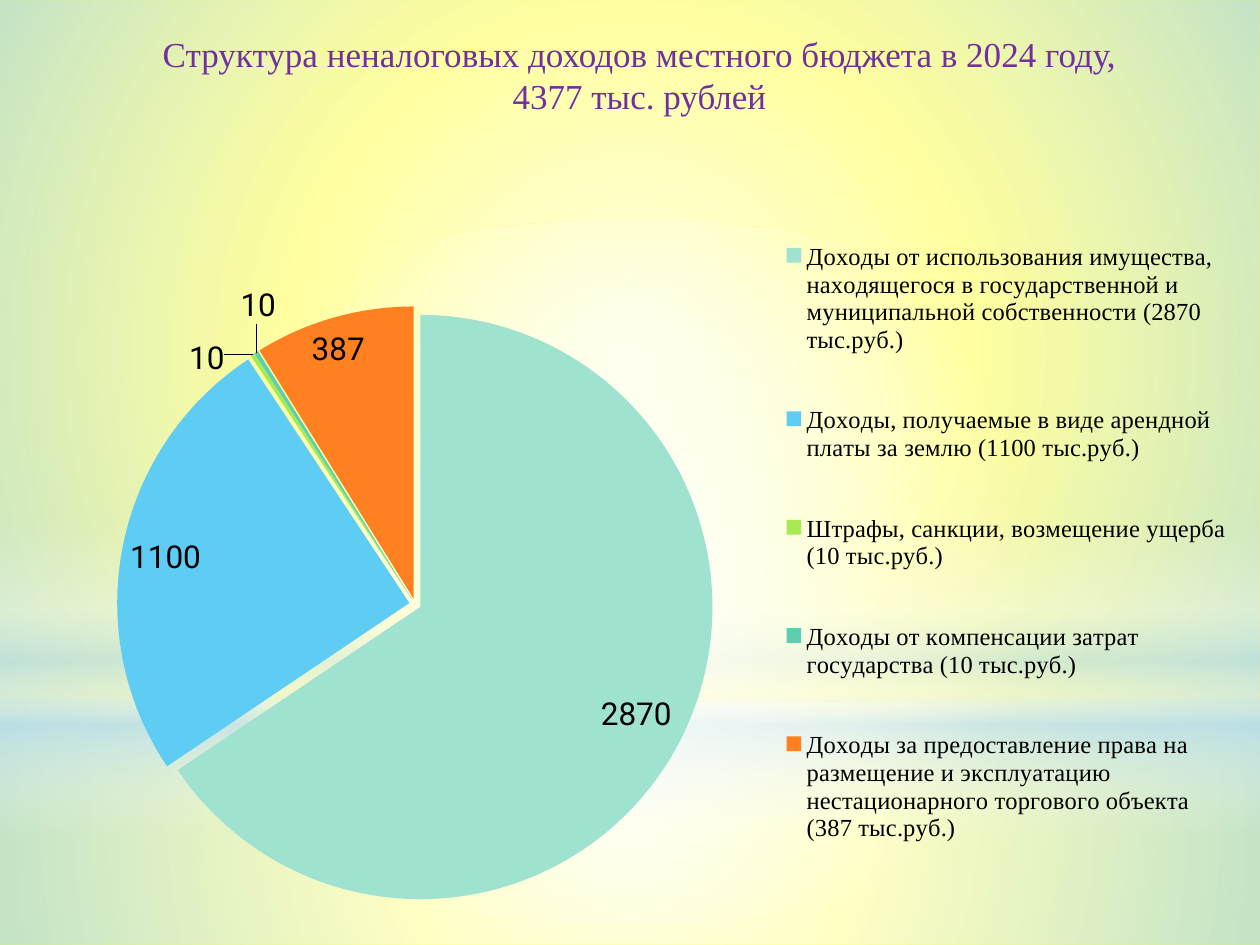
from lxml import etree
from pptx import Presentation
from pptx import util as u
from pptx.chart.data import CategoryChartData
from pptx.dml.color import RGBColor
from pptx.enum import chart as charts, shapes, text
from pptx.oxml import parse_xml
from pptx.oxml.ns import nsdecls, qn

SCALE = 914400 / 126


def px(length):
    return u.Emu(round(length * SCALE))


def color(value):
    return RGBColor.from_string(value)


deck = Presentation()
deck.slide_width, deck.slide_height = px(1260), px(945)
page = deck.slides.add_slide(deck.slide_layouts[5])
page.background.fill.solid()
page.background.fill.fore_color.rgb = color("FFFF00")

# Background glow: shape, box, shading, stops of (position, colour, opacity)
RADIAL = ('<a:path path="circle"><a:fillToRect l="50000" t="50000" '
          'r="50000" b="50000"/></a:path>')
LINEAR = '<a:lin ang="5400000" scaled="0"/>'
RECT, OVAL = shapes.MSO_SHAPE.RECTANGLE, shapes.MSO_SHAPE.OVAL
WHITE, BLUE = "FFFFFF", "B4DCFA"
layers = [
    (RECT, (0, 703, 1260, 242), RADIAL,
     [(0, WHITE, 91), (37, WHITE, 76), (100, BLUE, 79)]),
    (RECT, (0, 0, 1260, 703), RADIAL,
     [(0, WHITE, 89), (48, WHITE, 62), (100, BLUE, 79)]),
    (RECT, (0, 519, 1260, 315), LINEAR,
     [(0, WHITE, 0), (29, WHITE, 30), (45, BLUE, 40),
      (55, WHITE, 26), (65, BLUE, 60), (100, WHITE, 0)]),
    (OVAL, (0, 221, 1260, 703), RADIAL,
     [(0, WHITE, 100), (56, WHITE, 0)]),
]
for kind, box, shading, stops in layers:
    layer = page.shapes.add_shape(kind, *map(px, box))
    layer.shadow.inherit = False
    layer.line.fill.background()
    stop_xml = "".join(
        f'<a:gs pos="{position * 1000}"><a:srgbClr val="{tone}">'
        f'<a:alpha val="{opacity * 1000}"/></a:srgbClr></a:gs>'
        for position, tone, opacity in stops)
    gradient = parse_xml(
        f'<a:gradFill {nsdecls("a")} rotWithShape="1">'
        f'<a:gsLst>{stop_xml}</a:gsLst>{shading}</a:gradFill>')
    layer.element.spPr.find(qn("a:prstGeom")).addnext(gradient)

# Pie chart
slices = [
    ("Доходы от использования имущества, находящегося в государственной "
     "и муниципальной собственности (2870 тыс.руб.)", 2870, "9EE2CF"),
    ("Доходы, получаемые в виде арендной платы за землю (1100 тыс.руб.)",
     1100, "5ECCF3"),
    ("Штрафы, санкции, возмещение ущерба (10 тыс.руб.)", 10, "A7EA52"),
    ("Доходы от компенсации затрат государства (10 тыс.руб.)", 10, "5DCEAF"),
    ("Доходы за предоставление права на размещение и эксплуатацию "
     "нестационарного торгового объекта (387 тыс.руб.)", 387, "FF8021"),
]
chart_data = CategoryChartData()
chart_data.categories = [name for name, amount, tone in slices]
chart_data.add_series("Series 1", [amount for name, amount, tone in slices])
chart = page.shapes.add_chart(
    charts.XL_CHART_TYPE.PIE, px(46), px(190), px(1191), px(727),
    chart_data).chart
chart.has_title = False
chart.has_legend = True
chart.legend.position = charts.XL_LEGEND_POSITION.RIGHT
chart.legend.include_in_layout = False

pie = chart.plots[0]
pie.vary_by_categories = True
series = pie.series[0]
for index, (name, amount, tone) in enumerate(slices):
    fill = series.points[index].format.fill
    fill.solid()
    fill.fore_color.rgb = color(tone)
explosion = etree.Element(qn("c:explosion"), val="2")
series._element.find(qn("c:dPt")).addprevious(explosion)

# Value labels: side of the edge and shift, one for each slice
labels = series.data_labels
labels.show_value = True
INSIDE = charts.XL_LABEL_POSITION.INSIDE_END
OUTSIDE = charts.XL_LABEL_POSITION.OUTSIDE_END
label_places = [(INSIDE, 0, -0.01), (INSIDE, 0, -0.01), (OUTSIDE, -0.02, 0.04),
                (OUTSIDE, 0.02, -0.03), (INSIDE, -0.02, 0.01)]
fonts = [(chart.font, 18, "Roboto"), (labels.font, 18, "Roboto"),
         (chart.legend.font, 14, "Times New Roman")]
for index, (side, shift_x, shift_y) in enumerate(label_places):
    label = series.points[index].data_label
    label.position = side
    fonts.append((label.font, 18, "Roboto"))
    layout = parse_xml(
        f'<c:layout {nsdecls("c")}><c:manualLayout><c:x val="{shift_x}"/>'
        f'<c:y val="{shift_y}"/></c:manualLayout></c:layout>')
    entry = series._element.xpath(f'c:dLbls/c:dLbl[c:idx/@val="{index}"]')[0]
    entry.find(qn("c:idx")).addnext(layout)
for font, size, face in fonts:
    font.size, font.name = u.Pt(size), face
    font.color.rgb = color("000000")

# Fixed places for the pie and the legend
places = [
    (chart._chartSpace.chart.plotArea, '<c:layoutTarget val="inner"/>',
     (0.01, 0.16, 0.6, 0.82)),
    (chart.legend._element, "", (0.62, 0, 0.38, 0.97)),
]
for owner, target, box in places:
    for old in owner.findall(qn("c:layout")):
        owner.remove(old)
    sizes = "".join(f'<c:{key} val="{value}"/>' for key, value in zip("xywh", box))
    layout = parse_xml(
        f'<c:layout {nsdecls("c")}><c:manualLayout>{target}'
        f'<c:xMode val="edge"/><c:yMode val="edge"/>{sizes}'
        '</c:manualLayout></c:layout>')
    position = owner.find(qn("c:legendPos"))
    if position is None:
        owner.insert(0, layout)
    else:
        position.addnext(layout)

# Title, in front of the glow
title = page.shapes.title
page.shapes._spTree.append(title.element)
title.left, title.top, title.width, title.height = map(px, (54, 26, 1171, 97))
frame = title.text_frame
frame.word_wrap = True
frame.vertical_anchor = text.MSO_ANCHOR.TOP
frame.text = ("Структура неналоговых доходов местного бюджета в 2024 году,\v"
              "4377 тыс. рублей")
para = frame.paragraphs[0]
para.alignment = text.PP_ALIGN.CENTER
for span in para.runs:
    for key, value in {"size": u.Pt(20), "name": "Times New Roman"}.items():
        setattr(span.font, key, value)
    span.font.color.rgb = color("7030A0")

deck.save("out.pptx")
